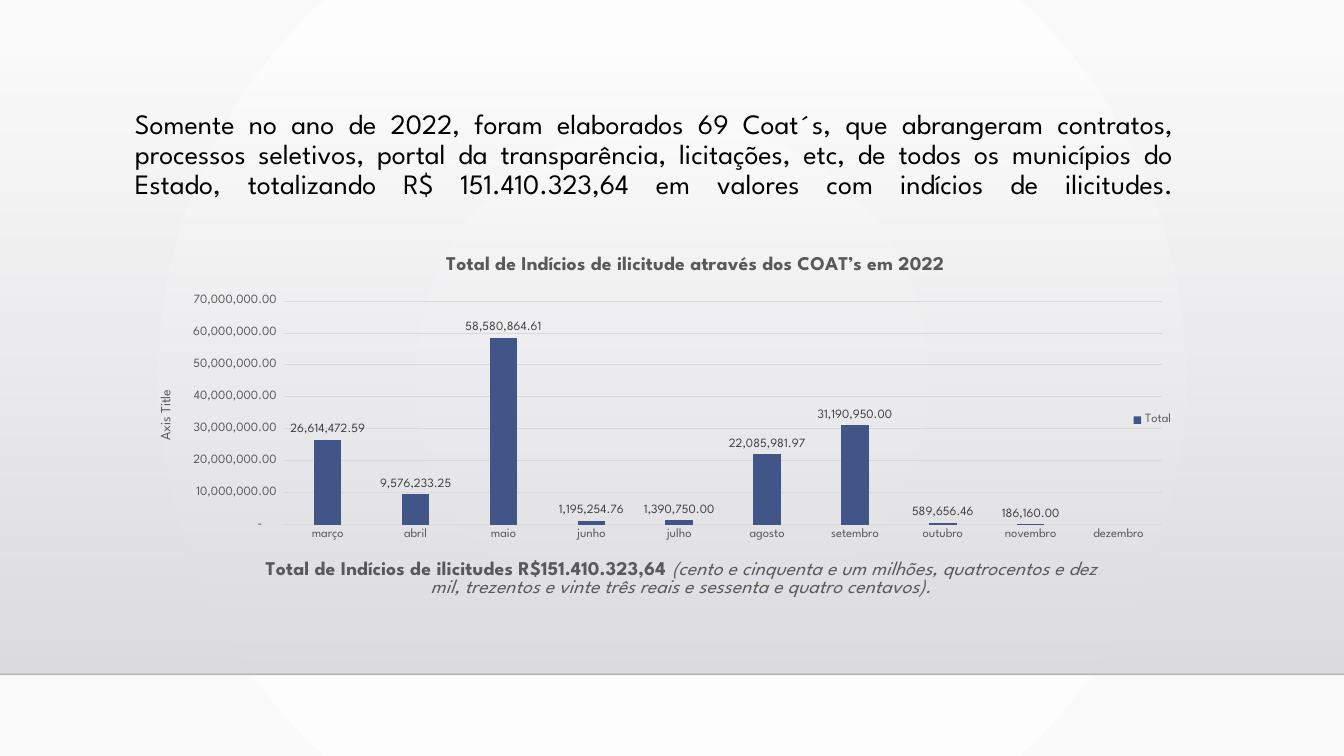
import pptx
import pptx.chart.data
import pptx.dml.color
import pptx.enum.chart
import pptx.enum.shapes
import pptx.enum.text
import pptx.oxml
import pptx.oxml.ns
import pptx.util
from pptx.util import Inches

FONT = "League Spartan"
GREY = "595959"
GRID = "D9D9D9"
NUMBER_FORMAT = '_(* #,##0.00_);_(* \\(#,##0.00\\);_(* "-"??_);_(@_)'
qn = pptx.oxml.ns.qn
rgb = pptx.dml.color.RGBColor.from_string


def add_text(paragraph, text, size, color=GREY, bold=False, italic=False):
    run = paragraph.add_run()
    run.text = text
    run.font.name = FONT
    run.font.size = pptx.util.Pt(size)
    run.font.bold = bold
    run.font.italic = italic
    run.font.color.rgb = rgb(color)


def set_layout(parent, index, **values):
    for old in parent.findall(qn("c:layout")):
        parent.remove(old)
    items = "".join(f'<c:{name} val="{value}"/>' for name, value in values.items())
    parent.insert(index, pptx.oxml.parse_xml(
        f'<c:layout {pptx.oxml.ns.nsdecls("c")}><c:manualLayout>{items}</c:manualLayout></c:layout>'))


presentation = pptx.Presentation()
presentation.slide_width = Inches(13.33)
presentation.slide_height = Inches(7.5)
slide = presentation.slides.add_slide(presentation.slide_layouts[6])

background = slide.background.fill
background.gradient()
for stop, color in zip(background.gradient_stops, ["FFFFFF", "FAFAFA"]):
    stop.color.rgb = rgb(color)
direction = next(slide.element.iter(qn("a:lin")))
direction.getparent().replace(direction, pptx.oxml.parse_xml(
    f'<a:path {pptx.oxml.ns.nsdecls("a")} path="circle">'
    '<a:fillToRect l="50000" t="50000" r="50000" b="50000"/></a:path>'))

panel = slide.shapes.add_shape(
    pptx.enum.shapes.MSO_SHAPE.RECTANGLE, 0, Inches(0.51), Inches(13.33), Inches(6.18))
panel.shadow.inherit = False
panel.line.fill.background()
panel.fill.gradient()
panel.fill.gradient_angle = 270
for stop, color in zip(panel.fill.gradient_stops, ["DCDCE0", "DEDEE2"]):
    stop.color.rgb = rgb(color)
first_color = next(panel.element.iter(qn("a:gs"))).find(qn("a:srgbClr"))
first_color.append(first_color.makeelement(qn("a:alpha"), {"val": "0"}))

floor = slide.shapes.add_connector(
    pptx.enum.shapes.MSO_CONNECTOR.STRAIGHT, 0, Inches(6.69), Inches(13.33), Inches(6.69))
floor.line.width = pptx.util.Pt(1)
floor.line.color.rgb = rgb("000001")
floor_color = next(floor.element.iter(qn("a:srgbClr")))
floor_color.append(floor_color.makeelement(qn("a:alpha"), {"val": "20000"}))
floor_properties = floor.element.spPr
floor_properties.append(floor_properties.makeelement(qn("a:effectLst"), {}))

intro = slide.shapes.add_textbox(Inches(1.24), Inches(1.04), Inches(10.5), Inches(1.15))
intro.text_frame.word_wrap = True
paragraph = intro.text_frame.paragraphs[0]
paragraph.alignment = pptx.enum.text.PP_ALIGN.JUSTIFY
paragraph.line_spacing = 0.9
add_text(
    paragraph,
    "Somente no ano de 2022, foram elaborados 69 Coat´s, que abrangeram contratos, "
    "processos seletivos, portal da transparência, licitações, etc, de todos os municípios "
    "do Estado, totalizando R$ 151.410.323,64 em valores com indícios de ilicitudes.",
    20, color="000000")
paragraph.add_line_break()

monthly_totals = {
    "março": 26614472.59, "abril": 9576233.25, "maio": 58580864.61, "junho": 1195254.76,
    "julho": 1390750, "agosto": 22085981.97, "setembro": 31190950, "outubro": 589656.46,
    "novembro": 186160, "dezembro": None,
}
chart_data = pptx.chart.data.CategoryChartData(number_format=NUMBER_FORMAT)
chart_data.categories = list(monthly_totals)
chart_data.add_series("Total", list(monthly_totals.values()))
chart = slide.shapes.add_chart(
    pptx.enum.chart.XL_CHART_TYPE.COLUMN_CLUSTERED,
    Inches(1.24), Inches(2.38), Inches(10.5), Inches(3.6), chart_data).chart
chart.font.name = FONT
chart.font.size = pptx.util.Pt(10)
chart.font.color.rgb = rgb("000000")

plot = chart.plots[0]
plot.vary_by_categories = False
plot.gap_width = 219
plot.overlap = -27
series = plot.series[0]
series.format.fill.solid()
series.format.fill.fore_color.rgb = rgb("415588")
labels = series.data_labels
labels.show_value = True
labels.position = pptx.enum.chart.XL_LABEL_POSITION.OUTSIDE_END

chart.has_legend = True
chart.legend.position = pptx.enum.chart.XL_LEGEND_POSITION.RIGHT
chart.legend.include_in_layout = False

months, amounts = chart.category_axis, chart.value_axis
for axis in (months, amounts):
    axis.major_tick_mark = pptx.enum.chart.XL_TICK_MARK.NONE
months.format.line.color.rgb = rgb(GRID)
months.format.line.width = pptx.util.Pt(0.75)
amounts.format.line.fill.background()
amounts.major_gridlines.format.line.color.rgb = rgb(GRID)
amounts.major_gridlines.format.line.width = pptx.util.Pt(0.75)
amounts.minimum_scale = 0
amounts.maximum_scale = 70000000
amounts.major_unit = 10000000

for numbers in (labels, amounts.tick_labels):
    numbers.number_format = NUMBER_FORMAT
    numbers.number_format_is_linked = False
for font, color in (
    (labels.font, "404040"), (chart.legend.font, GREY),
    (months.tick_labels.font, GREY), (amounts.tick_labels.font, GREY),
):
    font.name = FONT
    font.size = pptx.util.Pt(9)
    font.color.rgb = rgb(color)

add_text(chart.chart_title.text_frame.paragraphs[0],
         "Total de Indícios de ilicitude através dos COAT’s em 2022", 14, bold=True)
month_title = months.axis_title.text_frame.paragraphs[0]
add_text(month_title, "Total de Indícios de ilicitudes R$151.410.323,64 ", 14, bold=True)
add_text(month_title,
         "(cento e cinquenta e um milhões, quatrocentos e dez mil, trezentos e vinte três "
         "reais e sessenta e quatro centavos).", 14, italic=True)
add_text(amounts.axis_title.text_frame.paragraphs[0], "Axis Title", 10)
next(amounts.axis_title.element.iter(qn("a:bodyPr"))).set("rot", "-5400000")

for title, left, top in (
    (chart.chart_title, 0.3, 0.03), (months.axis_title, 0.13, 0.88), (amounts.axis_title, 0.03, 0.41),
):
    set_layout(title.element if hasattr(title, "element") else title._element, 1,
               xMode="edge", yMode="edge", x=left, y=top)
plot_area = next(chart.element.iter(qn("c:plotArea"))) if hasattr(chart, "element") else chart._chartSpace.chart.plotArea
set_layout(plot_area, 0, layoutTarget="inner", xMode="edge", yMode="edge",
           x=0.15, y=0.17, w=0.83, h=0.62)

presentation.save("out.pptx")
